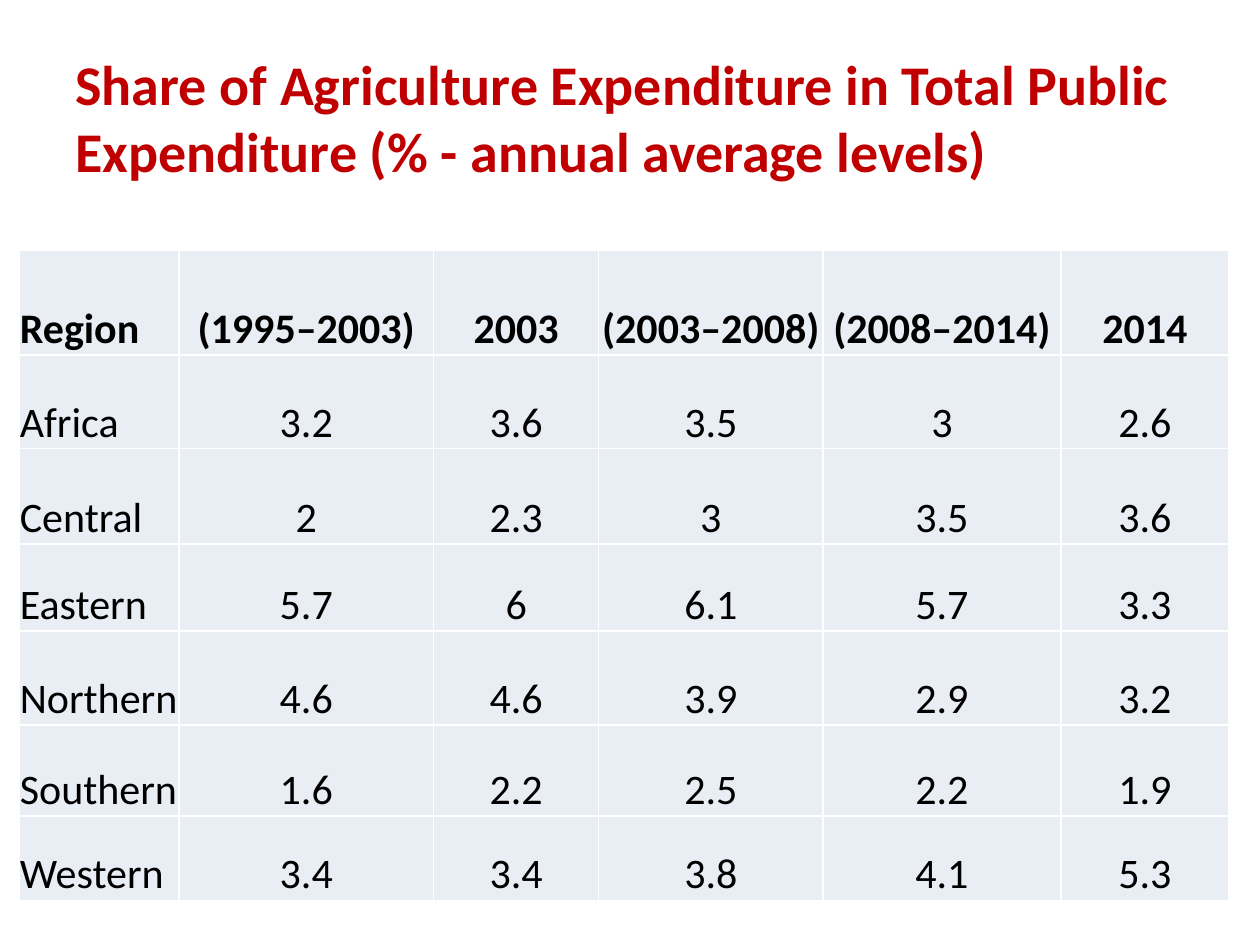
"""Build a slide with a table of agriculture's share of public expenditure by region."""
from typing import NamedTuple

from lxml import etree
from pptx import Presentation
from pptx.dml.color import RGBColor
from pptx.enum.text import MSO_ANCHOR, PP_ALIGN
from pptx.oxml.ns import qn
from pptx.util import Cm, Pt

LEFT, CENTER = PP_ALIGN.LEFT, PP_ALIGN.CENTER
MIDDLE, BOTTOM = MSO_ANCHOR.MIDDLE, MSO_ANCHOR.BOTTOM
RED = RGBColor(0xC0, 0x00, 0x00)
BLACK = RGBColor(0x00, 0x00, 0x00)
WHITE = RGBColor(0xFF, 0xFF, 0xFF)
PALE = RGBColor(0xE9, 0xED, 0xF4)
FONT = "Calibri"
TITLE = ("Share of Agriculture Expenditure in Total Public "
         "Expenditure (% - annual average levels)")


class Row(NamedTuple):
    height: float
    cells: tuple[str, ...]
    bold: bool = False


WIDTHS = (3.23, 5.13, 3.33, 4.52, 4.8, 3.38)
ROWS = (
    Row(2.11, ("Region", "(1995–2003)", "2003", "(2003–2008)", "(2008–2014)", "2014"), True),
    Row(1.88, ("Africa", "3.2", "3.6", "3.5", "3", "2.6")),
    Row(1.93, ("Central", "2", "2.3", "3", "3.5", "3.6")),
    Row(1.75, ("Eastern", "5.7", "6", "6.1", "5.7", "3.3")),
    Row(1.9, ("Northern", "4.6", "4.6", "3.9", "2.9", "3.2")),
    Row(1.83, ("Southern", "1.6", "2.2", "2.5", "2.2", "1.9")),
    Row(1.7, ("Western", "3.4", "3.4", "3.8", "4.1", "5.3")),
)


def write(frame, text: str, *, size: int, color: RGBColor = BLACK,
          bold: bool = False, align: PP_ALIGN = LEFT) -> None:
    """Put one formatted paragraph in a text frame."""
    para = frame.paragraphs[0]
    para.alignment = align
    run = para.add_run()
    run.text = text
    font = run.font
    font.name, font.size, font.bold = FONT, Pt(size), bold
    font.color.rgb = color


def border(cell, color: RGBColor, width: float) -> None:
    """Draw a line on each side of a cell."""
    props = cell._tc.get_or_add_tcPr()
    for side in ("lnL", "lnR", "lnT", "lnB"):
        line = etree.SubElement(props, qn(f"a:{side}"), w=str(Pt(width)))
        fill = etree.SubElement(line, qn("a:solidFill"))
        etree.SubElement(fill, qn("a:srgbClr"), val=str(color))


def add_title(slide) -> None:
    """Add the heading."""
    frame = slide.shapes.add_textbox(Cm(1.27), Cm(0.76), Cm(23.5), Cm(3.18)).text_frame
    frame.word_wrap = True
    frame.vertical_anchor = MIDDLE
    write(frame, TITLE, size=32, color=RED, bold=True)


def add_grid(slide) -> None:
    """Add the table of shares by region and period."""
    high = sum(row.height for row in ROWS)
    table = slide.shapes.add_table(len(ROWS), len(WIDTHS), Cm(0.38), Cm(5.05),
                                   Cm(sum(WIDTHS)), Cm(high)).table
    table.first_row = table.horz_banding = False
    for col, width in zip(table.columns, WIDTHS):
        col.width = Cm(width)
    for line, row in zip(table.rows, ROWS):
        line.height = Cm(row.height)
        for num, (cell, text) in enumerate(zip(line.cells, row.cells)):
            border(cell, WHITE, 1)
            cell.fill.solid()
            cell.fill.fore_color.rgb = PALE
            cell.vertical_anchor = BOTTOM
            cell.margin_left = cell.margin_right = cell.margin_top = Cm(0.02)
            cell.margin_bottom = Cm(0)
            write(cell.text_frame, text, size=24, bold=row.bold,
                  align=CENTER if num else LEFT)


def main() -> None:
    """Build and save the slide."""
    deck = Presentation()
    deck.slide_width, deck.slide_height = Cm(25.4), Cm(19.05)
    slide = deck.slides.add_slide(deck.slide_layouts[6])
    add_title(slide)
    add_grid(slide)
    deck.save("out.pptx")


if __name__ == "__main__":
    main()
